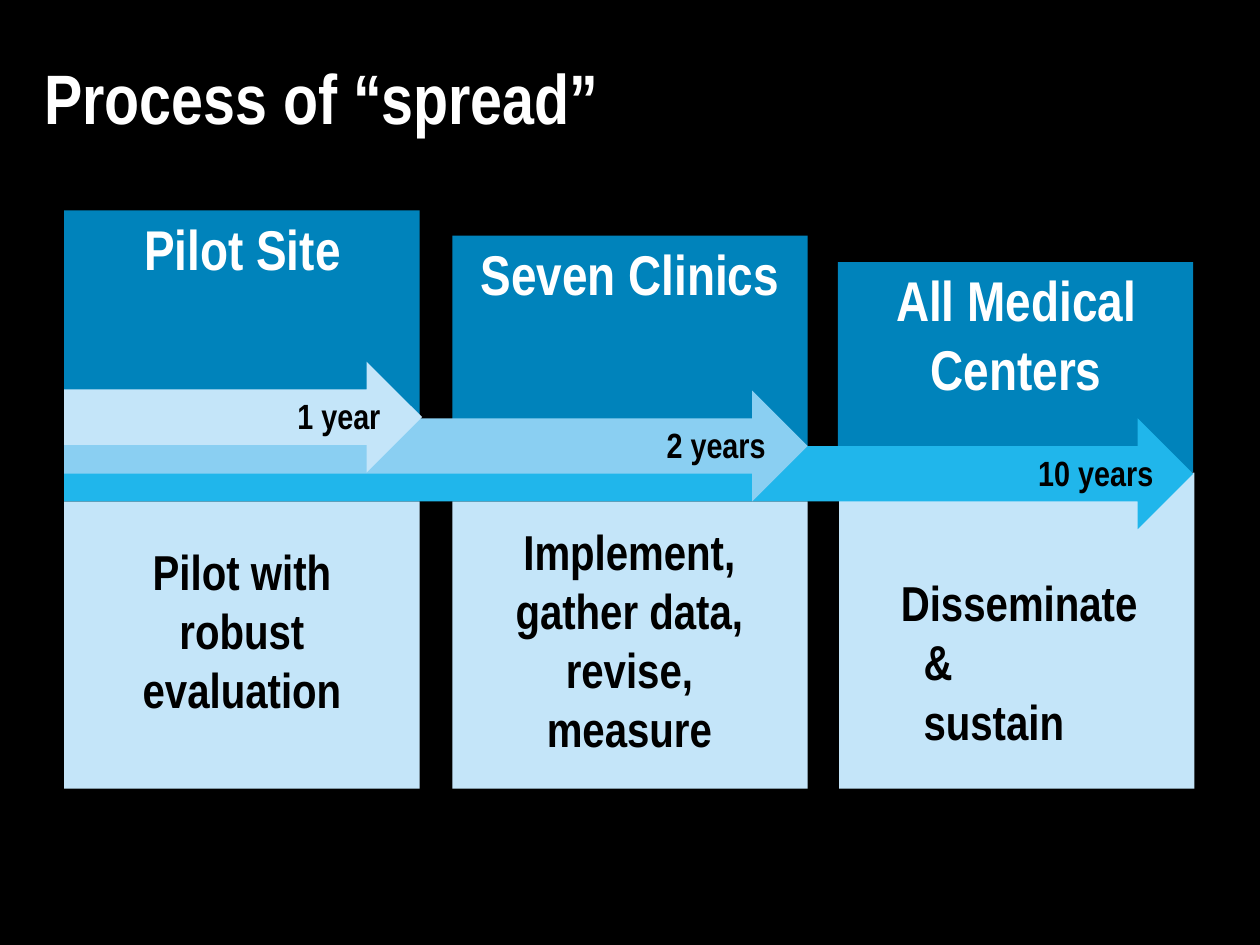
from typing import NamedTuple

from pptx import Presentation
from pptx.dml.color import RGBColor
from pptx.enum import shapes, text
from pptx.util import Inches, Pt

BLACK = RGBColor(0x00, 0x00, 0x00)
WHITE = RGBColor(0xFF, 0xFF, 0xFF)
DEEP_BLUE = RGBColor(0x00, 0x83, 0xBB)
BRIGHT_BLUE = RGBColor(0x20, 0xB6, 0xEB)
SKY_BLUE = RGBColor(0x8A, 0xCF, 0xF2)
PALE_BLUE = RGBColor(0xC4, 0xE5, 0xF9)

FONT = "Arial Narrow"
LEFT = 0.51
PANEL_WIDTH = 2.82
PANEL_BOTTOM = 6.26
ARROW_HEIGHT = 0.88
LABEL_HEIGHT = 0.36
LABEL_DROP = 0.26  # from the arrow's top to its label


class Area(NamedTuple):
    left: float
    top: float
    width: float
    height: float


class Caption(NamedTuple):
    words: str
    area: Area
    size: int
    color: RGBColor
    centered: bool = True
    spacing: float = 1.0
    hanging: float = 0.0


class Stage(NamedTuple):
    head_left: float
    head_top: float
    head_bottom: float
    body_left: float
    body_top: float
    arrow_top: float
    arrow_tip: float
    arrow_color: RGBColor
    period: str
    period_left: float
    period_width: float
    heading: Caption
    action: Caption


STAGES = [
    Stage(0.51, 1.67, 3.75, 0.51, 3.98, 2.87, 3.35, PALE_BLUE,
          "1 year", 2.36, 0.69,
          Caption("Pilot Site", Area(1.13, 1.7, 1.59, 0.56), 32, WHITE),
          Caption("Pilot with robust evaluation",
                  Area(1.12, 4.29, 1.6, 1.44), 28, BLACK, spacing=1.01)),
    Stage(3.59, 1.87, 3.78, 3.59, 3.98, 3.1, 6.41, SKY_BLUE,
          "2 years", 5.29, 0.81,
          Caption("Seven Clinics", Area(3.8, 1.9, 2.4, 0.56), 32, WHITE),
          Caption("Implement, gather data, revise, measure",
                  Area(4.08, 4.14, 1.83, 1.9), 28, BLACK)),
    Stage(6.65, 2.08, 3.75, 6.66, 3.75, 3.32, 9.47, BRIGHT_BLUE,
          "10 years", 8.24, 0.93,
          Caption("All Medical Centers", Area(7.1, 2.1, 1.93, 1.1), 32, WHITE,
                  spacing=1.02),
          Caption("Disseminate\n& \nsustain", Area(7.15, 4.54, 1.89, 0.97), 28,
                  BLACK, centered=False, spacing=1.01, hanging=0.18)),
]


def add_solid(page, kind, area: Area, color: RGBColor) -> None:
    solid = page.shapes.add_shape(kind, *map(Inches, area))
    solid.shadow.inherit = False
    solid.fill.solid()
    solid.fill.fore_color.rgb = color
    solid.line.fill.background()


def add_caption(page, caption: Caption) -> None:
    box = page.shapes.add_textbox(*map(Inches, caption.area))
    frame = box.text_frame
    frame.word_wrap = True
    frame.margin_left = frame.margin_right = 0
    frame.margin_top = frame.margin_bottom = 0
    para = frame.paragraphs[0]
    para.alignment = (text.PP_ALIGN.CENTER if caption.centered
                      else text.PP_ALIGN.LEFT)
    para.line_spacing = caption.spacing
    if caption.hanging:
        properties = para._p.get_or_add_pPr()
        properties.set("marL", str(Inches(caption.hanging)))
        properties.set("indent", str(-Inches(caption.hanging)))
    for number, line in enumerate(caption.words.split("\n")):
        if number:
            para.add_line_break()
        span = para.add_run()
        span.text = line.strip()
        span.font.name = FONT
        span.font.size = Pt(caption.size)
        span.font.bold = True
        span.font.color.rgb = caption.color


def main() -> None:
    deck = Presentation()
    deck.slide_width, deck.slide_height = Inches(10), Inches(7.5)
    page = deck.slides.add_slide(deck.slide_layouts[6])
    page.background.fill.solid()
    page.background.fill.fore_color.rgb = BLACK

    # Title
    add_caption(page, Caption("Process of “spread”", Area(0.35, 0.43, 9.47, 0.93),
                              40, WHITE, centered=False))

    # Panels: a dark head and a pale body for each stage
    rectangle = shapes.MSO_SHAPE.RECTANGLE
    for stage in STAGES:
        add_solid(page, rectangle,
                  Area(stage.body_left, stage.body_top, PANEL_WIDTH,
                       PANEL_BOTTOM - stage.body_top), PALE_BLUE)
        add_solid(page, rectangle,
                  Area(stage.head_left, stage.head_top, PANEL_WIDTH,
                       stage.head_bottom - stage.head_top), DEEP_BLUE)

    # Arrows: the longest lies at the back
    for stage in reversed(STAGES):
        add_solid(page, shapes.MSO_SHAPE.RIGHT_ARROW,
                  Area(LEFT, stage.arrow_top, stage.arrow_tip - LEFT,
                       ARROW_HEIGHT), stage.arrow_color)
        add_caption(page, Caption(
            stage.period,
            Area(stage.period_left, stage.arrow_top + LABEL_DROP,
                 stage.period_width, LABEL_HEIGHT),
            20, BLACK, centered=False))

    # Headings and actions
    for stage in STAGES:
        add_caption(page, stage.heading)
        add_caption(page, stage.action)

    deck.save("out.pptx")


if __name__ == "__main__":
    main()
